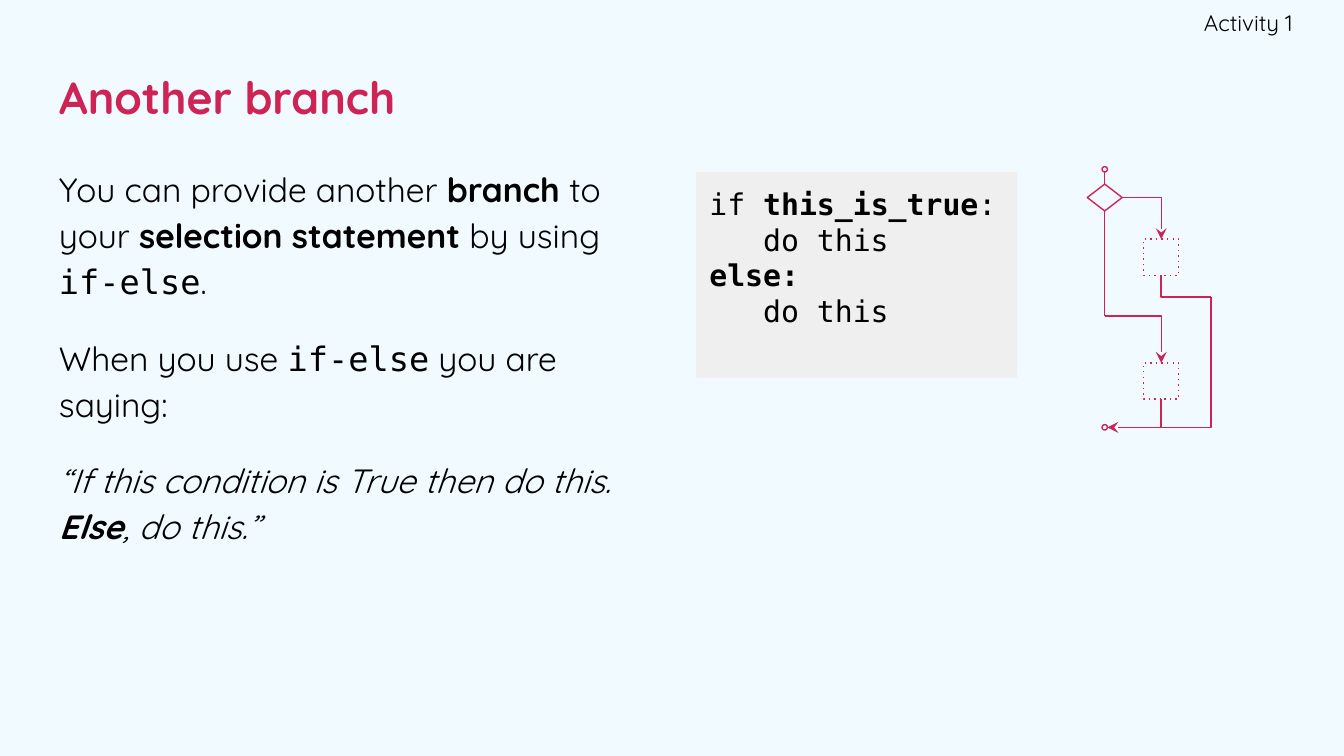
from pptx import Presentation
from pptx import util as u
from pptx.dml.color import RGBColor
from pptx.enum import shapes, text
from pptx.oxml.ns import qn
from lxml import etree

COLOURS = {"background": "F1FAFF", "accent": "CD2355", "code": "EFEFEF", "ink": "000000"}
SANS, MONO = "Quicksand", "DejaVu Sans Mono"


def colour(name):
    return RGBColor.from_string(COLOURS[name])


def write(paragraph, words, size=18, font=SANS, ink="ink", bold=False, italic=False):
    run = paragraph.add_run()
    run.text = words
    run.font.size, run.font.name = u.Pt(size), font
    run.font.bold, run.font.italic = bold, italic
    run.font.color.rgb = colour(ink)


class SlideBuilder:
    """Holds the slide and the style of its elements."""

    def __init__(self, slide, line_width=0.75, inset=0.1):
        self.slide = slide
        self.line_width = u.Pt(line_width)
        self.inset = u.Inches(inset)
        slide.background.fill.solid()
        slide.background.fill.fore_color.rgb = colour("background")

    def frame(self, shape, paragraphs, anchor=text.MSO_ANCHOR.TOP, align=text.PP_ALIGN.LEFT,
              spacing=1.0, gap=0, **style):
        """Fill a shape with paragraphs, each a list of (words, format) runs."""
        box = shape.text_frame
        box.word_wrap = True
        box.auto_size = text.MSO_AUTO_SIZE.NONE
        box.vertical_anchor = anchor
        box.margin_left = box.margin_right = box.margin_top = box.margin_bottom = self.inset
        for i, runs in enumerate(paragraphs):
            paragraph = box.add_paragraph() if i else box.paragraphs[0]
            paragraph.alignment = align
            paragraph.line_spacing = spacing
            paragraph.space_before = u.Pt(gap if i else 0)
            for words, changes in runs:
                write(paragraph, words, **{**style, **changes})
        return box

    def title(self, words, left, top, width, height):
        heading = self.slide.shapes.title
        heading.left, heading.top = u.Inches(left), u.Inches(top)
        heading.width, heading.height = u.Inches(width), u.Inches(height)
        self.frame(heading, [[(words, {})]], text.MSO_ANCHOR.MIDDLE,
                   size=24, ink="accent", bold=True)

    def textbox(self, paragraphs, left, top, width, height, **style):
        box = self.slide.shapes.add_textbox(*map(u.Inches, (left, top, width, height)))
        return self.frame(box, paragraphs, **style)

    def shape(self, kind, left, top, width, height, fill=None, dotted=False):
        shape = self.slide.shapes.add_shape(kind, *map(u.Inches, (left, top, width, height)))
        shape.shadow.inherit = False
        if fill:
            shape.fill.solid()
            shape.fill.fore_color.rgb = colour(fill)
            shape.line.fill.background()
        else:
            shape.fill.background()
            shape.line.color.rgb = colour("accent")
            shape.line.width = self.line_width
            if dotted:
                etree.SubElement(shape.line._get_or_add_ln(), qn("a:prstDash"), val="dot")
        return shape

    def connector(self, start, end, bent=False, arrow=False):
        """Draw a line; a bent one leaves its start horizontally and turns once."""
        kind = shapes.MSO_CONNECTOR.ELBOW if bent else shapes.MSO_CONNECTOR.STRAIGHT
        line = self.slide.shapes.add_connector(kind, *map(u.Inches, (*start, *end)))
        line.line.color.rgb = colour("accent")
        line.line.width = self.line_width
        properties = line._element.spPr
        if bent:
            properties.find(qn("a:prstGeom")).set("prst", "bentConnector2")
        if arrow:
            etree.SubElement(line.line._get_or_add_ln(), qn("a:tailEnd"), type="stealth")
        etree.SubElement(properties, qn("a:effectLst"))


def draw_flowchart(page):
    main, branch, right = 8.22, 8.64, 9.01
    start, end = 1.26, 3.18
    decision_top, decision_middle, decision_bottom = 1.37, 1.47, 1.57
    true_top, else_top, step_height = 1.78, 2.7, 0.27
    true_exit, else_turn = 2.21, 2.35
    node, step_width = 0.04, 0.26
    half = step_width / 2

    # Terminals, decision and steps
    for y in (start, end):
        page.shape(shapes.MSO_SHAPE.OVAL, main - node / 2, y - node / 2, node, node)
    page.shape(shapes.MSO_SHAPE.FLOWCHART_DECISION, main - half, decision_top,
               step_width, decision_bottom - decision_top)
    for top in (true_top, else_top):
        page.shape(shapes.MSO_SHAPE.RECTANGLE, branch - half, top, step_width, step_height,
                   dotted=True)

    # Main line and the two branches
    page.connector((main, start + node / 2), (main, decision_top))
    page.connector((main, decision_bottom), (main, else_turn))
    page.connector((main + half, decision_middle), (branch, true_top), bent=True, arrow=True)
    page.connector((main, else_turn), (branch, else_top), bent=True, arrow=True)

    # Ways back to the end
    page.connector((right, true_exit), (branch, true_top + step_height), bent=True)
    page.connector((branch, end), (right, true_exit), bent=True)
    page.connector((branch, else_top + step_height), (branch, end))
    page.connector((branch, end), (main + node / 2, end), arrow=True)


def main():
    deck = Presentation()
    # A 16:9 page
    deck.slide_width = u.Inches(10)
    deck.slide_height = deck.slide_width * 9 // 16
    page = SlideBuilder(deck.slides.add_slide(deck.slide_layouts[5]))
    bold, mono, italic = {"bold": True}, {"font": MONO}, {"italic": True}

    # Heading and activity label
    page.title("Another branch", 0.34, 0.34, 9.32, 0.76)
    label = page.textbox([[("Activity 1", {})]], 7.48, 0, 2.14, 0.34, size=12,
                         anchor=text.MSO_ANCHOR.MIDDLE, align=text.PP_ALIGN.RIGHT)
    label.margin_right = 0

    # Explanation
    page.textbox([
        [("You can provide another ", {}), ("branch ", bold), ("to your ", {}),
         ("selection statement", bold), (" by using ", {}), ("if-else", mono), (".", {})],
        [("When you use ", {}), ("if-else", mono), (" you are saying:", {})],
        [("“If this condition is True then do this. ", italic),
         ("Else", {**italic, **bold}), (", do this.”", italic)],
    ], 0.34, 1.11, 4.48, 4, spacing=1.15, gap=16)

    # Code, with its actions indented by three characters
    code = page.shape(shapes.MSO_SHAPE.RECTANGLE, 5.18, 1.28, 2.39, 1.53, fill="code")
    action = [("do this", {})]
    lines = page.frame(code, [
        [("if ", {}), ("this_is_true", bold), (":", {})], action,
        [("else:", bold)], action,
    ], size=16, font=MONO).paragraphs
    for indented in lines[1::2]:
        indented._p.get_or_add_pPr().set("marL", str(u.Inches(0.4)))

    draw_flowchart(page)
    deck.save("out.pptx")


if __name__ == "__main__":
    main()
